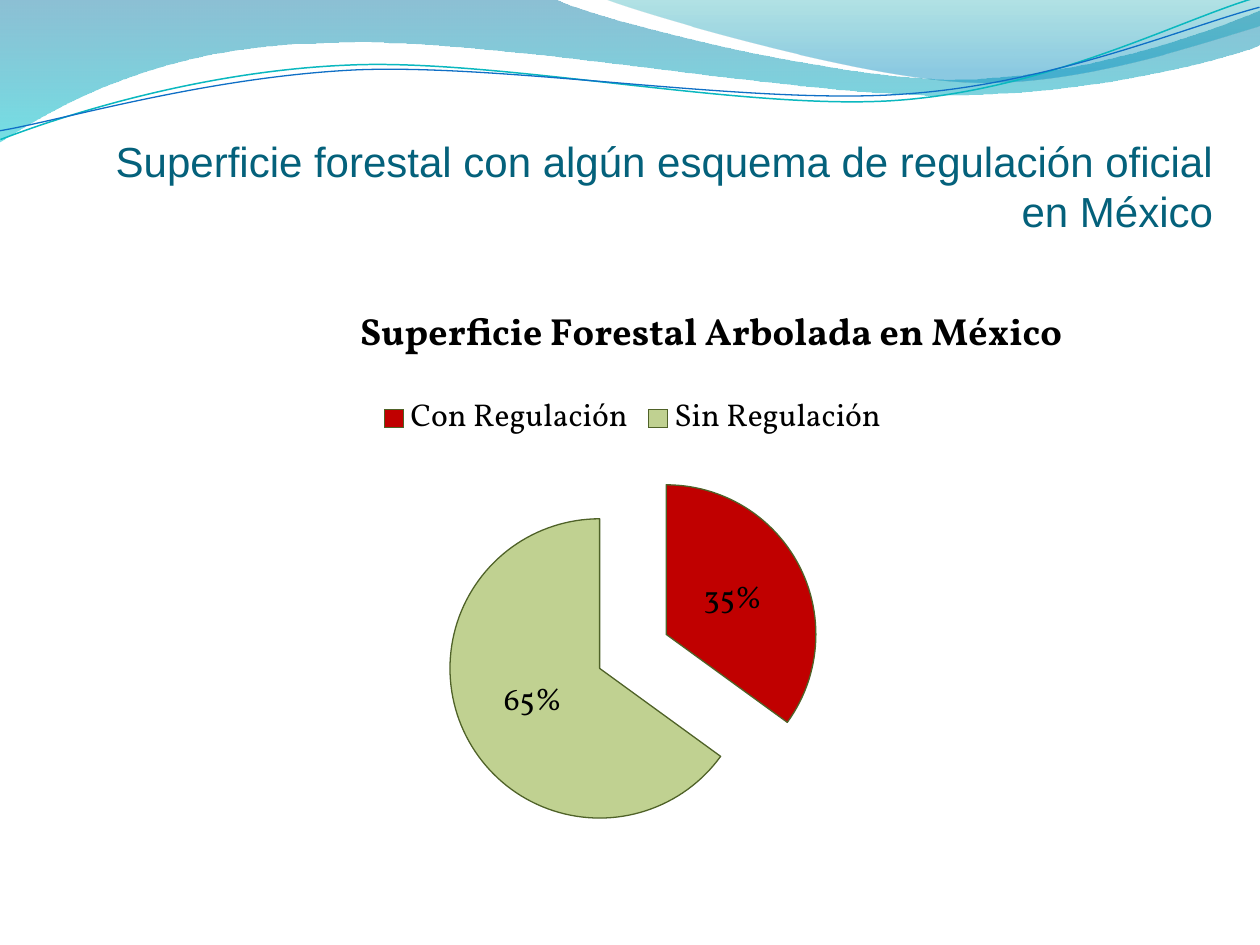
from lxml.etree import SubElement
from pptx import Presentation
from pptx.chart.data import CategoryChartData
from pptx.dml.color import RGBColor
from pptx.enum.chart import XL_CHART_TYPE, XL_LABEL_POSITION, XL_LEGEND_POSITION
from pptx.enum.text import MSO_ANCHOR, PP_ALIGN
from pptx.oxml import parse_xml
from pptx.oxml.ns import nsdecls, qn
from pptx.util import Pt

PX = 914400 / 126
HEX = {
    "title": "04617B", "text": "000000", "edge": "4F6228",
    "con": "C00000", "sin": "C0D191",
    "blue": "0074A1", "aqua": "00C6CF", "teal": "00A1A9", "sky": "008BBF",
    "cyan": "0AB8BF", "navy": "0F6FC6",
}


def rgb(name):
    return RGBColor.from_string(HEX[name])


def draw(shapes, start, parts, close):
    """Outline in px: a part is a line end (2 numbers) or a cubic curve (6)."""
    pen = shapes.build_freeform(*start, scale=PX)
    for part in parts:
        pen.add_line_segments(list(zip(part[::2], part[1::2])), close=False)
    if close:
        pen.add_line_segments([], close=True)
    shape = pen.convert_to_shape()
    shape.shadow.inherit = False
    lines = shape._element.spPr.iter(qn("a:lnTo"))
    lines = iter(list(lines))
    for part in parts:
        ends = [next(lines) for _ in part[::2]]
        if len(ends) == 3:
            curve = parse_xml(f'<a:cubicBezTo {nsdecls("a")}/>')
            ends[0].addprevious(curve)
            for end in ends:
                curve.append(end[0])
                end.getparent().remove(end)
    return shape


deck = Presentation()
deck.slide_width, deck.slide_height = round(1260 * PX), round(945 * PX)
slide = deck.slides.add_slide(deck.slide_layouts[5])

# Gradient bands: start, parts, stops (position, colour, opacity in percent)
bands = [
    ((0, 0), [(554, -1), (600, 21, 837, 79, 955, 79),
              (1075, 79, 1207, 33, 1260, 11), (1261, 45),
              (1239, 55, 1096, 96, 940, 95), (784, 95, 481, 35, 324, 43),
              (163, 45, 58, 105, -1, 142), (0, 0)],
     [(0, "blue", 45), (1, "aqua", 55)]),
    ((604, -1), [(641, 14, 859, 78, 969, 82),
                 (1079, 87, 1211, 40, 1260, 26), (1260, 0), (604, -1)],
     [(0, "teal", 30), (0.8, "sky", 45)]),
]
for start, parts, stops in bands:
    band = draw(slide.shapes, start, parts, True)
    band.line.fill.background()
    band.fill.gradient()
    band.fill.gradient_angle = 270
    for stop, (pos, name, alpha) in zip(band.fill.gradient_stops, stops):
        stop.position = pos
        stop.color.rgb = rgb(name)
    tints = band._element.spPr.iter(qn("a:srgbClr"))
    for tint, (pos, name, alpha) in zip(tints, stops):
        SubElement(tint, qn("a:alpha")).set("val", str(alpha * 1000))

# Thin waves, tilted a little
waves = [
    ((-2, 110), [(58, 90, 199, 51, 349, 52), (499, 52, 745, 117, 896, 113),
                 (1049, 109, 1184, 45, 1260, 27)], "cyan", 0.85),
    ((-2, 101), [(58, 94, 207, 57, 357, 57), (508, 58, 750, 111, 902, 107),
                 (1052, 104, 1187, 53, 1262, 37)], "navy", 0.75),
]
group = slide.shapes.add_group_shape()
for start, parts, name, width in waves:
    wave = draw(group.shapes, start, parts, False)
    wave.rotation = 357.3
    wave.fill.background()
    wave.line.color.rgb = rgb(name)
    wave.line.width = Pt(width)

# Title
title = slide.shapes.title
title.left, title.top, title.width, title.height = [
    round(n * PX) for n in (79, 78, 1134, 158)]
frame = title.text_frame
frame.word_wrap = True
frame.vertical_anchor = MSO_ANCHOR.BOTTOM
frame.margin_left = frame.margin_right = frame.margin_bottom = 0
frame.margin_top = round(6 * PX)
para = frame.paragraphs[0]
para.alignment = PP_ALIGN.RIGHT
run = para.add_run()
run.text = "Superficie forestal con algún esquema de regulación oficial en México"
run.font.name, run.font.size = "Arial", Pt(24)
run.font.color.rgb = rgb("title")

# Pie chart
data = CategoryChartData()
data.categories = ["Con Regulación", "Sin Regulación"]
data.add_series("Series 1", (35, 65))
chart = slide.shapes.add_chart(
    XL_CHART_TYPE.PIE, *[round(n * PX) for n in (115, 286, 1036, 570)], data).chart
chart.font.name, chart.font.size = "Vollkorn", Pt(18)
chart.font.color.rgb = rgb("text")

chart.has_title = True
run = chart.chart_title.text_frame.paragraphs[0].add_run()
run.text = "Superficie Forestal Arbolada en México"
run.font.name, run.font.size, run.font.bold = "Vollkorn", Pt(21.6), True
run.font.color.rgb = rgb("text")
head = chart.chart_title._element
for old in head.findall(qn("c:layout")):
    head.remove(old)
head.find(qn("c:tx")).addnext(parse_xml(
    f'<c:layout {nsdecls("c")}><c:manualLayout><c:xMode val="edge"/>'
    '<c:yMode val="edge"/><c:x val="0.23"/><c:y val="0.02"/>'
    '</c:manualLayout></c:layout>'))

chart.has_legend = True
chart.legend.position = XL_LEGEND_POSITION.TOP
chart.legend.include_in_layout = False

plot = chart.plots[0]
plot.vary_by_categories = True
plot.has_data_labels = True
labels = plot.data_labels
labels.show_percentage, labels.show_value = True, False
labels.number_format, labels.number_format_is_linked = "0%", False
labels.position = XL_LABEL_POSITION.CENTER

pie = plot.series[0]
for i, name in enumerate(("con", "sin")):
    look = pie.points[i].format
    look.fill.solid()
    look.fill.fore_color.rgb = rgb(name)
    look.line.color.rgb = rgb("edge")
    look.line.width = Pt(0.75)
pie._element.find(qn("c:dPt")).addprevious(
    parse_xml(f'<c:explosion {nsdecls("c")} val="25"/>'))

deck.save("out.pptx")
